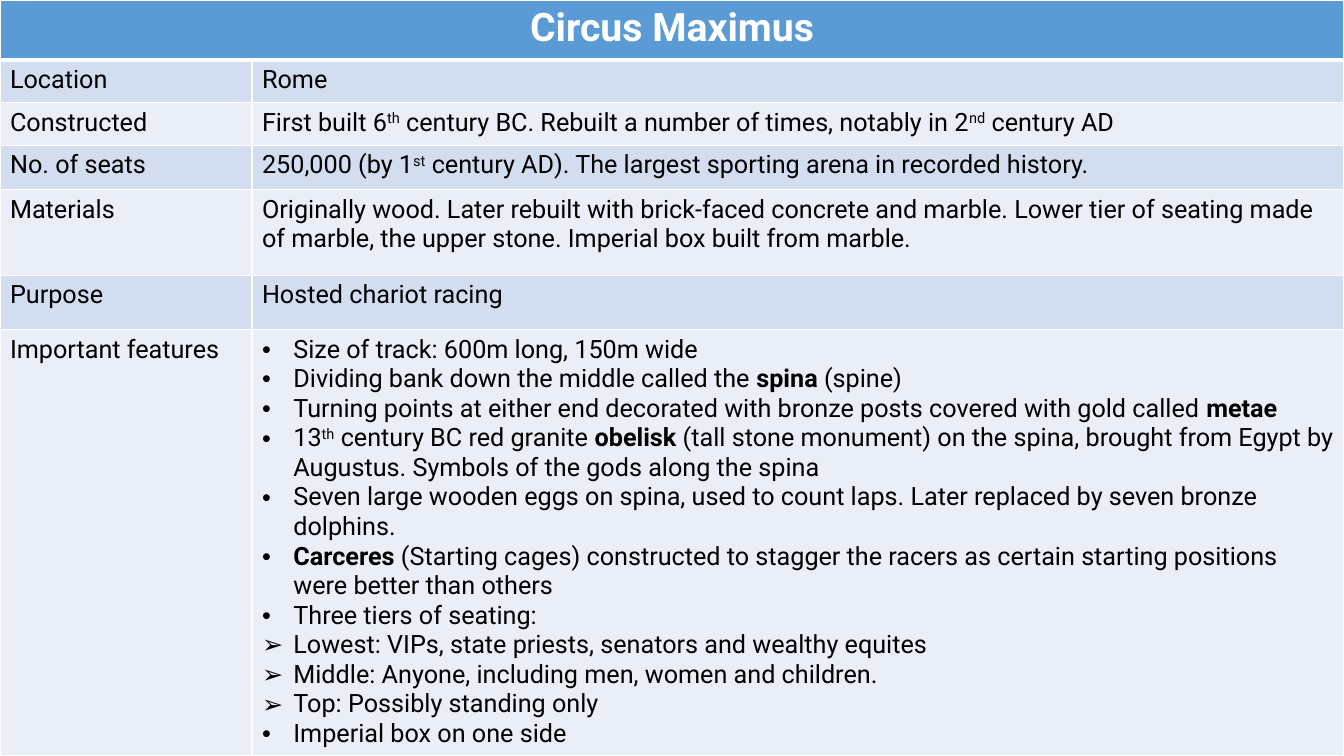
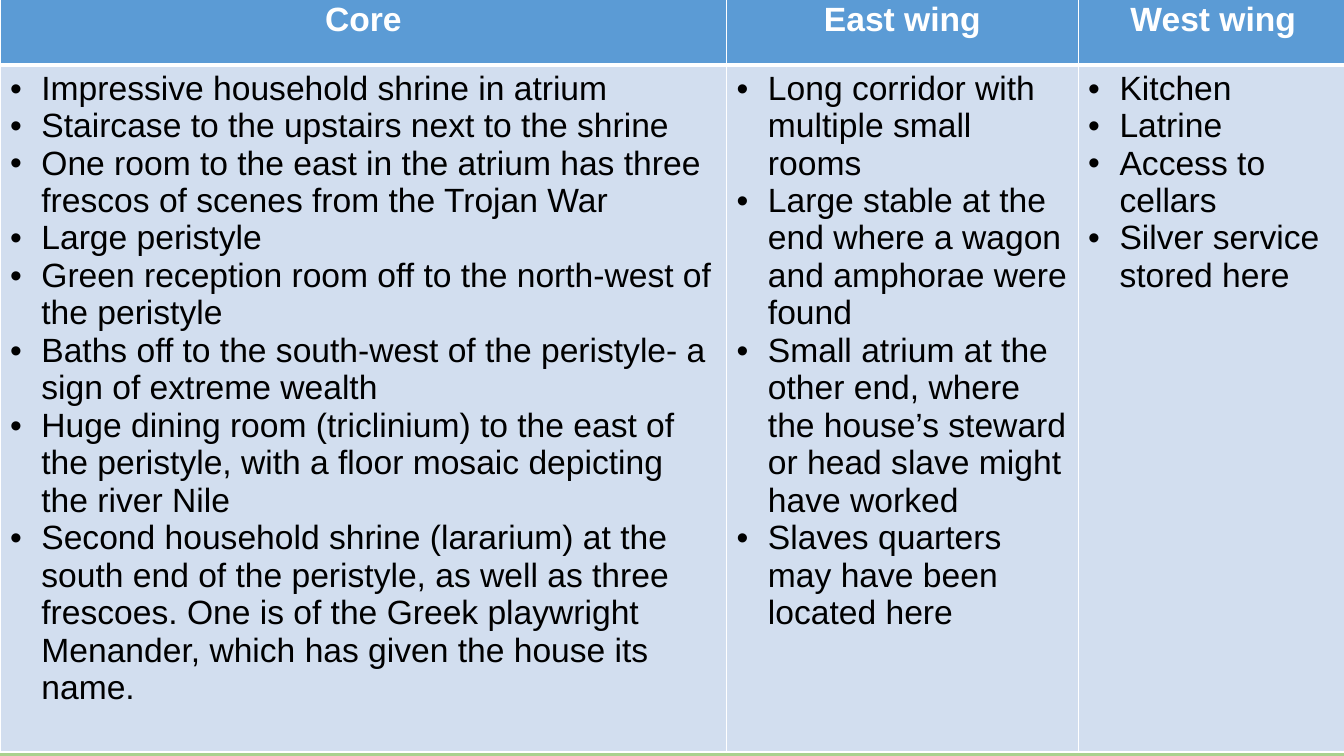
from collections import namedtuple

from pptx import Presentation
from pptx import dml, util as u
from pptx.dml import color
from pptx.enum import text as t
from pptx.oxml import parse_xml
from pptx.oxml.ns import nsdecls

Box = namedtuple("Box", "left top width height")

WIDTH, HEIGHT = 33.87, 19.05
BACKGROUND, HEADER, DARK_BAND, LIGHT_BAND = "A9D18E", "5B9BD5", "D2DEEF", "EAEFF7"
WHITE, BLACK = "FFFFFF", "000000"
BULLETS = "•➢"
INDENT = u.Cm(0.79)

CIRCUS_ROWS = [
    ("Location", "Rome"),
    ("Constructed", "First built 6^th^ century BC. Rebuilt a number of times, notably in 2^nd^ century AD"),
    ("No. of seats", "250,000 (by 1^st^ century AD). The largest sporting arena in recorded history."),
    ("Materials", "Originally wood. Later rebuilt with brick-faced concrete and marble. Lower tier of "
                  "seating made of marble, the upper stone. Imperial box built from marble."),
    ("Purpose", "Hosted chariot racing"),
    ("Important features", [
        "•Size of track: 600m long, 150m wide",
        "•Dividing bank down the middle called the *spina* (spine)",
        "•Turning points at either end decorated with bronze posts covered with gold called *metae*",
        "•13^th^ century BC red granite *obelisk* (tall stone monument) on the spina, brought from "
        "Egypt by Augustus. Symbols of the gods along the spina",
        "•Seven large wooden eggs on spina, used to count laps. Later replaced by seven bronze dolphins.",
        "•*Carceres *(Starting cages) constructed to stagger the racers as certain starting "
        "positions were better than others",
        "•Three tiers of seating:",
        "➢Lowest: VIPs, state priests, senators and wealthy equites",
        "➢Middle: Anyone, including men, women and children.",
        "➢Top: Possibly standing only",
        "•Imperial box on one side",
    ]),
]

HOUSE_PARTS = {
    "Core": [
        "•Impressive household shrine in atrium",
        "•Staircase to the upstairs next to the shrine",
        "•One room to the east in the atrium has three frescos of scenes from the Trojan War",
        "•Large peristyle",
        "•Green reception room off to the north-west of the peristyle",
        "•Baths off to the south-west of the peristyle- a sign of extreme wealth",
        "•Huge dining room (triclinium) to the east of the peristyle, with a floor mosaic "
        "depicting the river Nile",
        "•Second household shrine (lararium) at the south end of the peristyle, as well as three "
        "frescoes. One is of the Greek playwright Menander, which has given the house its name.",
    ],
    "East wing": [
        "•Long corridor with multiple small rooms",
        "•Large stable at the end where a wagon and amphorae were found",
        "•Small atrium at the other end, where the house’s steward or head slave might have worked",
        "•Slaves quarters may have been located here",
    ],
    "West wing": [
        "•Kitchen",
        "•Latrine",
        "•Access to cellars",
        "•Silver service stored here",
    ],
}


def paint(fill, value):
    """Give a fill one solid colour from a hex string."""
    fill.solid()
    fill.fore_color.rgb = color.RGBColor.from_string(value)


def add_bullet(paragraph, character):
    """Give a paragraph a hanging bullet."""
    properties = paragraph._p.get_or_add_pPr()
    properties.set("marL", str(INDENT))
    properties.set("indent", str(-INDENT))
    properties.append(parse_xml(f'<a:buFont {nsdecls("a")} typeface="Arial"/>'))
    properties.append(parse_xml(f'<a:buChar {nsdecls("a")} char="{character}"/>'))


def write(paragraph, content, font, size, ink=BLACK, bold=False, align=t.PP_ALIGN.LEFT):
    """Write text where *stars* mark bold, ^carets^ mark superscript and a leading bullet sign counts."""
    paragraph.alignment = align
    if content[0] in BULLETS:
        add_bullet(paragraph, content[0])
        content = content[1:]
    for index, stretch in enumerate(content.split("*")):
        for level, piece in enumerate(stretch.split("^")):
            if not piece:
                continue
            run = paragraph.add_run()
            run.text = piece
            run.font.name = font
            run.font.size = u.Pt(size)
            run.font.bold = bold or index % 2 == 1
            paint(run.font.fill, ink)
            if level % 2:
                run._r.get_or_add_rPr().set("baseline", "30000")


def add_borders(cell, **widths):
    """Draw white cell borders whose widths are given in points by side."""
    properties = cell._tc.get_or_add_tcPr()
    for side in "LRTB":
        width = u.Pt(widths.get(side, 1))
        properties.append(parse_xml(
            f'<a:ln{side} {nsdecls("a")} w="{width}"><a:solidFill>'
            f'<a:srgbClr val="{WHITE}"/></a:solidFill></a:ln{side}>'))


def fill_cell(cell, content, row, **style):
    """Style one cell by its row and write its paragraphs."""
    add_borders(cell, **({"B": 3} if row == 0 else {"T": 3} if row == 1 else {}))
    paint(cell.fill, HEADER if row == 0 else DARK_BAND if row % 2 else LIGHT_BAND)
    frame = cell.text_frame
    lines = [content] if isinstance(content, str) else content
    for index, line in enumerate(lines):
        paragraph = frame.add_paragraph() if index else frame.paragraphs[0]
        write(paragraph, line, **style)


def fill_up(lengths, total):
    """Add a last length that uses up the rest of the total."""
    return [*lengths, total - sum(lengths)]


def add_banded_table(slide, box, columns, rows, header, body, font, header_size, body_size):
    """Place a table in the box, whose last column and row take the space left."""
    widths, heights = fill_up(columns, box.width), fill_up(rows, box.height)
    table = slide.shapes.add_table(len(heights), len(widths), *map(u.Cm, box)).table
    for column, width in zip(table.columns, widths):
        column.width = u.Cm(width)
    for row, height in zip(table.rows, heights):
        row.height = u.Cm(height)
    if len(header) == 1:
        table.cell(0, 0).merge(table.cell(0, len(widths) - 1))
    for column, title in enumerate(header):
        fill_cell(table.cell(0, column), title, 0, font=font, size=header_size,
                  ink=WHITE, bold=True, align=t.PP_ALIGN.CENTER)
    for row, contents in enumerate(body, 1):
        for column, content in enumerate(contents):
            fill_cell(table.cell(row, column), content, row, font=font, size=body_size)


def add_slide(presentation):
    """Add a blank slide with the shared background."""
    slide = presentation.slides.add_slide(presentation.slide_layouts[6])
    paint(slide.background.fill, BACKGROUND)
    return slide


def add_circus_slide(presentation, box):
    """Build the fact sheet of the Circus Maximus."""
    add_banded_table(add_slide(presentation), box, [6.35], [1.52, 1.07, 1.07, 1.12, 2.16, 1.37],
                     ["Circus Maximus"], CIRCUS_ROWS, "Roboto", 28, 18)


def add_house_slide(presentation, box):
    """Build the comparison of the parts of the house."""
    add_banded_table(add_slide(presentation), box, [18.31, 8.86], [1.73],
                     list(HOUSE_PARTS), [HOUSE_PARTS.values()], "Arial", 24, 24)


def main():
    """Build and save the presentation."""
    presentation = Presentation()
    presentation.slide_width, presentation.slide_height = u.Cm(WIDTH), u.Cm(HEIGHT)
    add_circus_slide(presentation, Box(0, 0, WIDTH, HEIGHT))
    add_house_slide(presentation, Box(0, -0.1, 33.98, HEIGHT))
    presentation.save("out.pptx")


if __name__ == "__main__":
    main()
